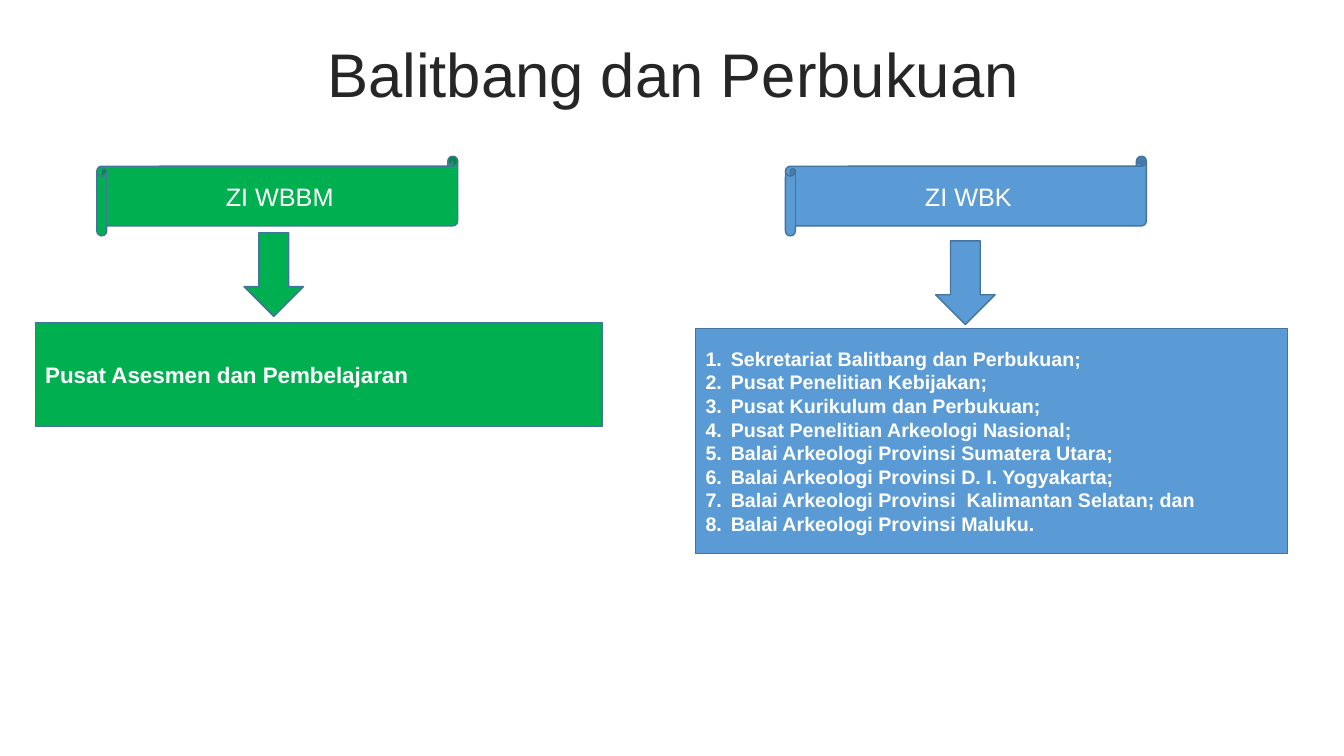
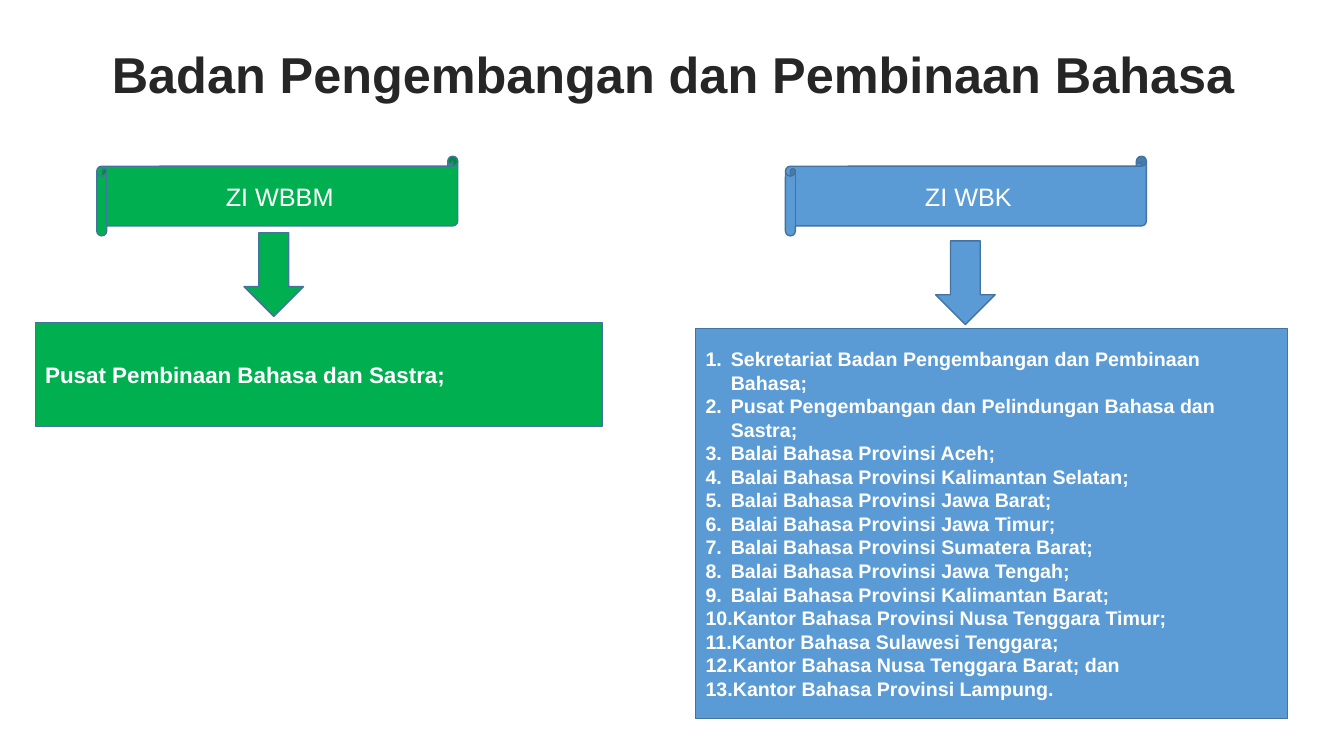
from collections import namedtuple

from lxml import etree
from pptx import Presentation
from pptx import util as u
from pptx.dml.color import RGBColor
from pptx.enum import shapes, text
from pptx.oxml.ns import qn

PX = 9144  # EMU per px, 100 px to the inch
FONT = "Arial"
GREEN = RGBColor(0x00, 0xB0, 0x50)
BLUE = RGBColor(0x5A, 0x9B, 0xD5)
EDGE = RGBColor(0x43, 0x73, 0x9E)
INK = RGBColor(0x26, 0x26, 0x26)
WHITE = RGBColor(0xFF, 0xFF, 0xFF)

Box = namedtuple("Box", "left top width height")
TITLE_BOX = Box(35, 37, 1266, 79)
SCROLL_SIZE = (358, 79)
SCROLL_TOP = 155
ARROW_SIZE = (59, 83)
HANG = 25

# Offsets of banner and arrow run from the left edge of the panel below them;
# arrow_rise is how far the arrow starts above that panel.
Column = namedtuple("Column", "label fill banner_dx arrow_dx arrow_rise size")
WBBM = Column("ZI WBBM", GREEN, 61, 207, 89, 16)
WBK = Column("ZI WBK", BLUE, 89, 238, 87, 14)
WBBM_BOX = Box(35, 320, 562, 103)

SLIDES = [
    {
        "title": "Balitbang dan Perbukuan",
        "title_font": {"size": u.Pt(44), "bold": False},
        "wbbm": "Pusat Asesmen dan Pembelajaran",
        "wbk_box": Box(690, 326, 587, 223),
        "wbk": [
            "Sekretariat Balitbang dan Perbukuan;",
            "Pusat Penelitian Kebijakan;",
            "Pusat Kurikulum dan Perbukuan;",
            "Pusat Penelitian Arkeologi Nasional;",
            "Balai Arkeologi Provinsi Sumatera Utara;",
            "Balai Arkeologi Provinsi D. I. Yogyakarta;",
            "Balai Arkeologi Provinsi  Kalimantan Selatan; dan",
            "Balai Arkeologi Provinsi Maluku.",
        ],
    },
    {
        "title": "Badan Pengembangan dan Pembinaan Bahasa",
        "title_font": {"size": u.Pt(36), "bold": True},
        "wbbm": "Pusat Pembinaan Bahasa dan Sastra;",
        "wbk_box": Box(690, 326, 587, 387),
        "wbk": [
            "Sekretariat Badan Pengembangan dan Pembinaan Bahasa;",
            "Pusat Pengembangan dan Pelindungan Bahasa dan Sastra;",
            "Balai Bahasa Provinsi Aceh;",
            "Balai Bahasa Provinsi Kalimantan Selatan;",
            "Balai Bahasa Provinsi Jawa Barat;",
            "Balai Bahasa Provinsi Jawa Timur;",
            "Balai Bahasa Provinsi Sumatera Barat;",
            "Balai Bahasa Provinsi Jawa Tengah;",
            "Balai Bahasa Provinsi Kalimantan Barat;",
            "Kantor Bahasa Provinsi Nusa Tenggara Timur;",
            "Kantor Bahasa Sulawesi Tenggara;",
            "Kantor Bahasa Nusa Tenggara Barat; dan",
            "Kantor Bahasa Provinsi Lampung.",
        ],
    },
]


def set_values(target, values):
    for name, value in values.items():
        setattr(target, name, value)


def emu(box):
    return [length * PX for length in box]


def write_lines(shape, lines, color, font, layout):
    """Fill the shape with one paragraph per line, all in the same format."""
    frame = shape.text_frame
    set_values(frame, {
        "word_wrap": True,
        "auto_size": text.MSO_AUTO_SIZE.NONE,
        "vertical_anchor": text.MSO_ANCHOR.MIDDLE,
    })
    for index, line in enumerate(lines):
        para = frame.add_paragraph() if index else frame.paragraphs[0]
        set_values(para, layout)
        span = para.add_run()
        span.text = line
        set_values(span.font, {"name": FONT, **font})
        span.font.color.rgb = color


def number_paragraphs(shape):
    for para in shape.text_frame.paragraphs:
        properties = para._p.get_or_add_pPr()
        properties.set("marL", str(HANG * PX))
        properties.set("indent", str(-HANG * PX))
        etree.SubElement(properties, qn("a:buFont"), typeface="+mj-lt")
        etree.SubElement(properties, qn("a:buAutoNum"), type="arabicPeriod")


def add_filled(page, kind, box, fill):
    shape = page.shapes.add_shape(kind, *emu(box))
    shape.shadow.inherit = False
    shape.fill.solid()
    shape.fill.fore_color.rgb = fill
    shape.line.color.rgb = EDGE
    shape.line.width = u.Pt(1)
    return shape


def add_title(page, title, font):
    holder = page.shapes.title
    set_values(holder, dict(zip(TITLE_BOX._fields, emu(TITLE_BOX))))
    write_lines(holder, [title], INK, font, {
        "alignment": text.PP_ALIGN.CENTER,
        "line_spacing": 0.9,
        "space_before": u.Pt(10),
    })


def add_column(page, column, box, lines):
    """Place the panel in the box, with its banner and arrow above."""
    kinds = shapes.MSO_SHAPE
    panel = add_filled(page, kinds.RECTANGLE, box, column.fill)
    write_lines(panel, lines, WHITE, {"size": u.Pt(column.size), "bold": True},
                {"alignment": text.PP_ALIGN.LEFT})
    if len(lines) > 1:
        number_paragraphs(panel)

    banner_box = Box(box.left + column.banner_dx, SCROLL_TOP, *SCROLL_SIZE)
    banner = add_filled(page, kinds.HORIZONTAL_SCROLL, banner_box, column.fill)
    write_lines(banner, [column.label], WHITE, {"size": u.Pt(18)},
                {"alignment": text.PP_ALIGN.CENTER})

    arrow_box = Box(box.left + column.arrow_dx, box.top - column.arrow_rise, *ARROW_SIZE)
    add_filled(page, kinds.DOWN_ARROW, arrow_box, column.fill)


def add_unit_slide(deck, content):
    page = deck.slides.add_slide(deck.slide_layouts.get_by_name("Title Only"))
    add_title(page, content["title"], content["title_font"])
    add_column(page, WBBM, WBBM_BOX, [content["wbbm"]])
    add_column(page, WBK, content["wbk_box"], content["wbk"])


def main():
    deck = Presentation()
    deck.slide_width, deck.slide_height = 1333 * PX, 750 * PX
    for content in SLIDES:
        add_unit_slide(deck, content)
    deck.save("out.pptx")


if __name__ == "__main__":
    main()
